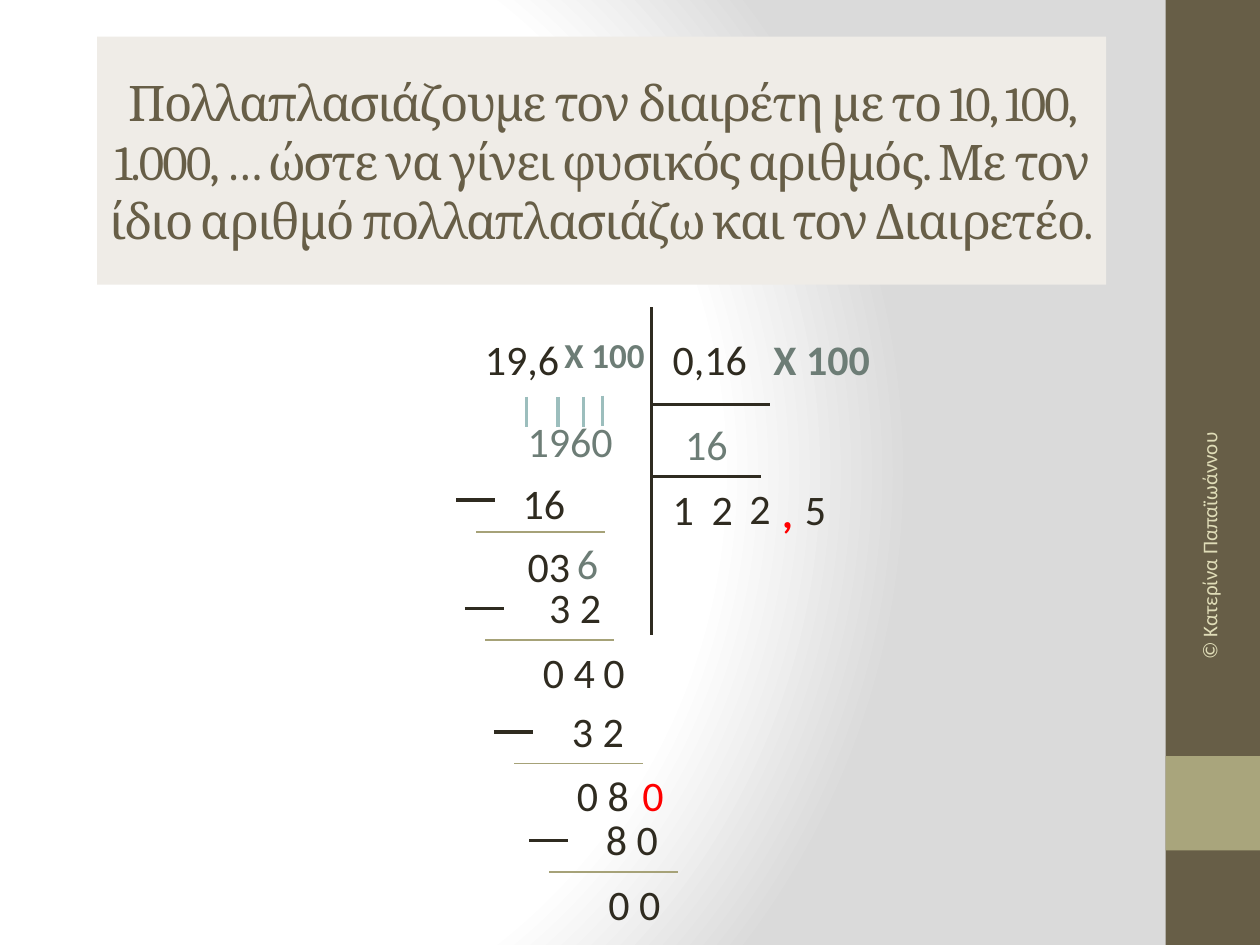
from pptx import Presentation
from pptx.dml.color import RGBColor
from pptx.enum.shapes import MSO_CONNECTOR, MSO_SHAPE
from pptx.enum.text import MSO_ANCHOR, MSO_AUTO_SIZE, PP_ALIGN
from pptx.oxml import parse_xml
from pptx.oxml.ns import nsdecls, qn
from pptx.util import Inches, Pt

INK = "2F2B20"
BROWN = "675E47"
OLIVE = "A9A57C"
RULE = "A6A278"
SCALED = "6D7D76"
TICK = "9CBEBD"
RED = "FF0000"

BAR_X = 5.17

# text, left, top, width, format
DIVISION = [
    ("19,6", 3.75, 2.6, 0.8, {}),
    ("0,16", 5.24, 2.6, 0.8, {}),
    ("Χ 100", 6.04, 2.6, 0.97, {"color": SCALED, "bold": True}),
    ("Χ 100", 4.38, 2.6, 0.85, {"color": SCALED, "bold": True, "size": 20}),
    ("1960", 4.09, 3.25, 0.93, {"color": SCALED}),
    ("16", 5.34, 3.27, 0.54, {"color": SCALED}),
    ("16", 4.05, 3.74, 0.54, {}),
    ("03", 4.09, 4.24, 0.54, {}),
    ("6", 4.48, 4.22, 0.37, {"color": SCALED}),
    ("3 2", 4.26, 4.57, 0.62, {}),
    ("0 4", 4.21, 5.08, 0.62, {}),
    ("0", 4.69, 5.08, 0.37, {}),
    ("3 2", 4.44, 5.55, 0.62, {}),
    ("0 8", 4.48, 6.06, 0.62, {}),
    ("0", 5, 6.06, 0.37, {"color": RED}),
    ("8 0", 4.71, 6.41, 0.62, {}),
    ("0 0", 4.73, 6.92, 0.62, {}),
    ("1", 5.24, 3.79, 0.46, {}),
    ("2", 5.55, 3.79, 0.37, {}),
    ("2", 5.85, 3.78, 0.37, {}),
    (",", 6.11, 3.81, 0.29, {"color": RED, "bold": True}),
    ("5", 6.29, 3.79, 0.37, {}),
]

# Left end and height of the rule under each subtraction
SUBTRACTIONS = [(3.78, 4.22), (3.85, 5.08), (4.08, 6.06), (4.36, 6.92)]

# Tick over each digit of the scaled dividend: x, top
DIGIT_TICKS = [(4.18, 3.15), (4.43, 3.15), (4.63, 3.15), (4.78, 3.14)]


def rgb(value):
    return RGBColor.from_string(value)


def place(shape, left, top, width, height):
    shape.left, shape.top = Inches(left), Inches(top)
    shape.width, shape.height = Inches(width), Inches(height)


def paint_background(slide):
    """Radial gradient; python-pptx only offers linear ones."""
    stops = "".join(
        f'<a:gs pos="{position}000"><a:srgbClr val="{color}"/></a:gs>'
        for position, color in [(0, "FFFFFF"), (75, "FFFFFF"), (100, "DADADA")]
    )
    slide.background.fill.solid()
    properties = slide.element.cSld.find(qn("p:bg")).find(qn("p:bgPr"))
    gradient = parse_xml(
        f'<a:gradFill {nsdecls("a")} rotWithShape="1"><a:gsLst>{stops}</a:gsLst>'
        '<a:path path="circle"><a:fillToRect l="20000" t="50000" r="100000" b="50000"/>'
        "</a:path></a:gradFill>"
    )
    properties.replace(properties.find(qn("a:solidFill")), gradient)


def write(frame, text, size=24, color=INK, bold=False, font="Calibri",
          align=PP_ALIGN.LEFT, anchor=MSO_ANCHOR.TOP, wrap=False, spacing=None):
    """Fill a text frame; spacing is the letter spacing in points."""
    frame.word_wrap = wrap
    frame.vertical_anchor = anchor
    paragraph = frame.paragraphs[0]
    paragraph.alignment = align
    run = paragraph.add_run()
    run.text = text
    run.font.size, run.font.name, run.font.bold = Pt(size), font, bold
    run.font.color.rgb = rgb(color)
    if spacing is not None:
        run.font._element.set("spc", str(spacing * 100))


def add_text(slide, text, left, top, width, height=0.5, **text_format):
    box = slide.shapes.add_textbox(
        Inches(left), Inches(top), Inches(width), Inches(height))
    write(box.text_frame, text, **text_format)
    return box


def add_band(slide, top, height, color):
    band = slide.shapes.add_shape(
        MSO_SHAPE.RECTANGLE, Inches(9.25), Inches(top), Inches(0.75), Inches(height))
    band.shadow.inherit = False
    band.fill.solid()
    band.fill.fore_color.rgb = rgb(color)
    band.line.fill.background()


def add_line(slide, x1, y1, x2, y2, color=INK, weight=2):
    line = slide.shapes.add_connector(
        MSO_CONNECTOR.STRAIGHT, Inches(x1), Inches(y1), Inches(x2), Inches(y2))
    line.line.color.rgb = rgb(color)
    line.line.width = Pt(weight)
    line._element.spPr.append(parse_xml(f'<a:effectLst {nsdecls("a")}/>'))


def add_title(slide, text):
    title = slide.shapes.title
    place(title, 0.77, 0.29, 8.01, 1.97)
    title.fill.solid()
    title.fill.fore_color.rgb = rgb("EFECE7")
    write(title.text_frame, text, size=28, color=BROWN, font="Cambria",
          align=PP_ALIGN.CENTER, anchor=MSO_ANCHOR.MIDDLE, wrap=True, spacing=-1)
    title.text_frame.auto_size = MSO_AUTO_SIZE.NONE


def add_subtraction(slide, x, y):
    add_line(slide, x, y, x + 1.02, y, RULE, 1)
    add_line(slide, x - 0.16, y - 0.25, x + 0.15, y - 0.25)


def add_division(slide):
    add_line(slide, BAR_X, 2.44, BAR_X, 5.04)
    add_line(slide, BAR_X, 3.21, 6.11, 3.21)
    add_line(slide, BAR_X, 3.78, 6.04, 3.78)
    for x, y in SUBTRACTIONS:
        add_subtraction(slide, x, y)
    for x, top in DIGIT_TICKS:
        add_line(slide, x, top, x, top + 0.24, TICK)
    for text, left, top, width, text_format in DIVISION:
        add_text(slide, text, left, top, width, **text_format)


def main():
    deck = Presentation()
    deck.slide_width, deck.slide_height = Inches(10), Inches(7.5)
    slide = deck.slides.add_slide(deck.slide_layouts[5])
    paint_background(slide)
    add_band(slide, 0, 7.5, BROWN)
    add_band(slide, 6, 0.75, OLIVE)
    add_title(slide, "Πολλαπλασιάζουμε τον διαιρέτη με το 10, 100, 1.000, … ώστε να γίνει "
                     "φυσικός αριθμός. Με τον ίδιο αριθμό πολλαπλασιάζω και τον Διαιρετέο.")
    add_division(slide)
    credit = add_text(slide, "© Κατερίνα Παπαϊωάννου", 8.3, 4.43, 2.59, 0.4, size=12,
                      color="DFDCB7", align=PP_ALIGN.RIGHT, anchor=MSO_ANCHOR.MIDDLE, wrap=True)
    credit.rotation = 270
    deck.save("out.pptx")


if __name__ == "__main__":
    main()
